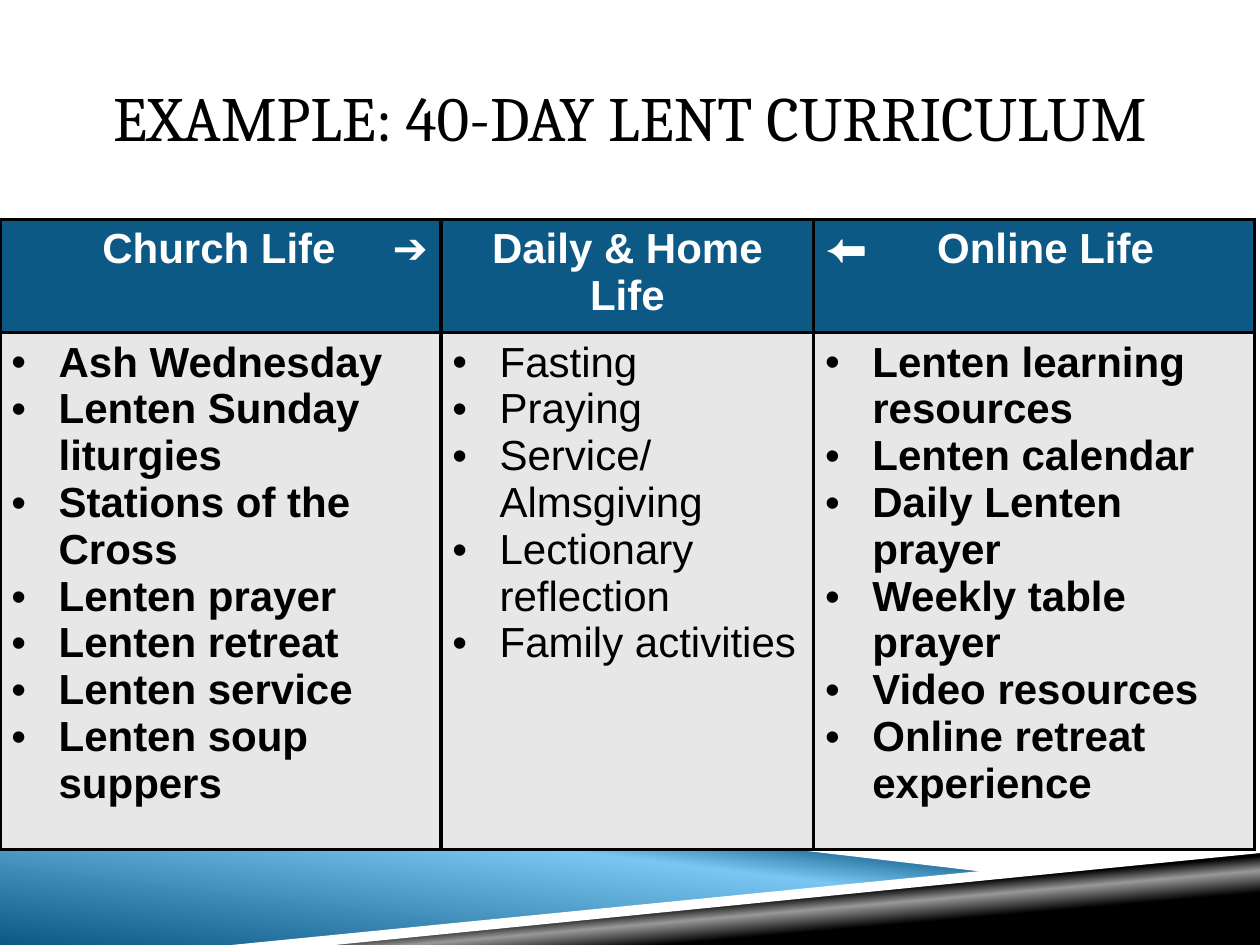
from dataclasses import dataclass

from lxml import etree
from pptx import Presentation
from pptx.dml.color import RGBColor
from pptx.enum.text import MSO_ANCHOR, PP_ALIGN
from pptx.oxml.ns import qn
from pptx.util import Pt

MIDDLE = MSO_ANCHOR.MIDDLE
LEFT, CENTER = PP_ALIGN.LEFT, PP_ALIGN.CENTER


@dataclass(frozen=True)
class Theme:
    title_font: str = "Cambria"
    body_font: str = "Arial"
    title_size: float = 36
    body_size: float = 24
    border_width: float = 2.25
    hanging: float = 27
    black: str = "000000"
    white: str = "FFFFFF"
    gray: str = "999999"
    blue: str = "0C5986"
    sky: str = "79C6F3"
    cell: str = "E7E7E7"


@dataclass
class Column:
    width: float
    heading: str
    items: list
    bold: bool
    align: PP_ALIGN = LEFT
    tabs: tuple = ()


class SlideBuilder:
    def __init__(self, slide, theme):
        self.slide = slide
        self.theme = theme

    def style(self, para, font_name, size, color, bold=False):
        font = para.font
        font.name, font.size, font.bold = font_name, Pt(size), bold
        font.color.rgb = RGBColor.from_string(color)

    def outline(self, points):
        builder = self.slide.shapes.build_freeform(*(Pt(v) for v in points[0]))
        builder.add_line_segments([(Pt(x), Pt(y)) for x, y in points[1:]])
        shape = builder.convert_to_shape()
        shape.shadow.inherit = False
        shape.line.fill.background()
        return shape

    def solid_band(self, points, color):
        fill = self.outline(points).fill
        fill.solid()
        fill.fore_color.rgb = RGBColor.from_string(color)

    def gradient_band(self, points, stops, angle):
        shape = self.outline(points)
        shape.fill.gradient()
        shape.fill.gradient_angle = angle
        stop_list = next(shape._element.iter(qn("a:gsLst")))
        for stop in list(stop_list):
            stop_list.remove(stop)
        for percent, color in stops:
            stop = etree.SubElement(stop_list, qn("a:gs"), pos=str(percent * 1000))
            etree.SubElement(stop, qn("a:srgbClr"), val=color)

    def title(self, text, left, top, width, height):
        box = self.slide.shapes.add_textbox(Pt(left), Pt(top), Pt(width), Pt(height))
        frame = box.text_frame
        frame.word_wrap = True
        frame.vertical_anchor = MIDDLE
        frame.margin_left = frame.margin_right = 0
        para = frame.paragraphs[0]
        para.text, para.alignment = text, CENTER
        self.style(para, self.theme.title_font, self.theme.title_size, self.theme.black)

    def paint_cell(self, cell, color):
        properties = cell._tc.get_or_add_tcPr()
        for side in ("lnL", "lnR", "lnT", "lnB"):
            line = etree.SubElement(properties, qn(f"a:{side}"),
                                    w=str(Pt(self.theme.border_width)))
            fill = etree.SubElement(line, qn("a:solidFill"))
            etree.SubElement(fill, qn("a:srgbClr"), val=self.theme.black)
        cell.fill.solid()
        cell.fill.fore_color.rgb = RGBColor.from_string(color)
        cell.margin_left = cell.margin_right = Pt(6.5)
        cell.margin_top = cell.margin_bottom = Pt(3.6)

    def add_tabs(self, para, tabs):
        tab_list = etree.SubElement(para._p.get_or_add_pPr(), qn("a:tabLst"))
        for position, align in tabs:
            etree.SubElement(tab_list, qn("a:tab"), pos=str(Pt(position)), algn=align)

    def add_bullet(self, para):
        properties = para._p.get_or_add_pPr()
        properties.set("marL", str(Pt(self.theme.hanging)))
        properties.set("indent", str(Pt(-self.theme.hanging)))
        etree.SubElement(properties, qn("a:buFont"), typeface=self.theme.body_font)
        etree.SubElement(properties, qn("a:buChar"), char="•")

    def table(self, columns, left, top, row_heights):
        theme = self.theme
        width = sum(column.width for column in columns)
        table = self.slide.shapes.add_table(
            len(row_heights), len(columns), Pt(left), Pt(top),
            Pt(width), Pt(sum(row_heights))).table
        table.horz_banding = False
        for row, height in zip(table.rows, row_heights):
            row.height = Pt(height)
        for index, column in enumerate(columns):
            table.columns[index].width = Pt(column.width)
            head, body = table.cell(0, index), table.cell(1, index)

            # Heading cell
            self.paint_cell(head, theme.blue)
            para = head.text_frame.paragraphs[0]
            para.text, para.alignment = column.heading, column.align
            if column.tabs:
                self.add_tabs(para, column.tabs)
            self.style(para, theme.body_font, theme.body_size, theme.white, True)

            # Bulleted cell
            self.paint_cell(body, theme.cell)
            body.text_frame.text = "\n".join(column.items)
            for para in body.text_frame.paragraphs:
                self.add_bullet(para)
                self.style(para, theme.body_font, theme.body_size,
                           theme.black, column.bold)


def main():
    theme = Theme()
    deck = Presentation()
    deck.slide_width, deck.slide_height = Pt(720), Pt(540)
    page = SlideBuilder(deck.slides.add_slide(deck.slide_layouts[6]), theme)

    # Decorative bands along the bottom
    page.gradient_band([(0, 430), (570, 498), (144, 540), (0, 540)],
                       [(0, theme.blue), (52, theme.sky), (66, theme.blue)], 83)
    page.gradient_band([(142.5, 540), (720, 484), (720, 540)],
                       [(28, theme.black), (40, theme.gray), (48, theme.black)], 95)
    page.solid_band([(0, 426), (0, 432), (569, 499), (599, 497)], theme.white)
    page.solid_band([(720, 482), (132.5, 540), (191.5, 540), (720, 487.5)], theme.white)

    # Title
    page.title("EXAMPLE: 40-DAY LENT CURRICULUM", 54, 21.6, 612, 90)

    # Curriculum table
    columns = [
        Column(252, "\tChurch Life\t➔",
               ["Ash Wednesday", "Lenten Sunday liturgies", "Stations of the Cross",
                "Lenten prayer", "Lenten retreat", "Lenten service",
                "Lenten soup suppers"],
               True, tabs=((52, "l"), (238, "r"))),
        Column(213, "Daily & Home Life",
               ["Fasting", "Praying", "Service/Almsgiving", "Lectionary reflection",
                "Family activities"],
               False, align=CENTER),
        Column(252, "⬅\tOnline Life",
               ["Lenten learning resources", "Lenten calendar", "Daily Lenten prayer",
                "Weekly table prayer", "Video resources", "Online retreat experience"],
               True, tabs=((64, "l"),)),
    ]
    page.table(columns, 0, 125.3, (37.5, 248.5))

    deck.save("out.pptx")


if __name__ == "__main__":
    main()
